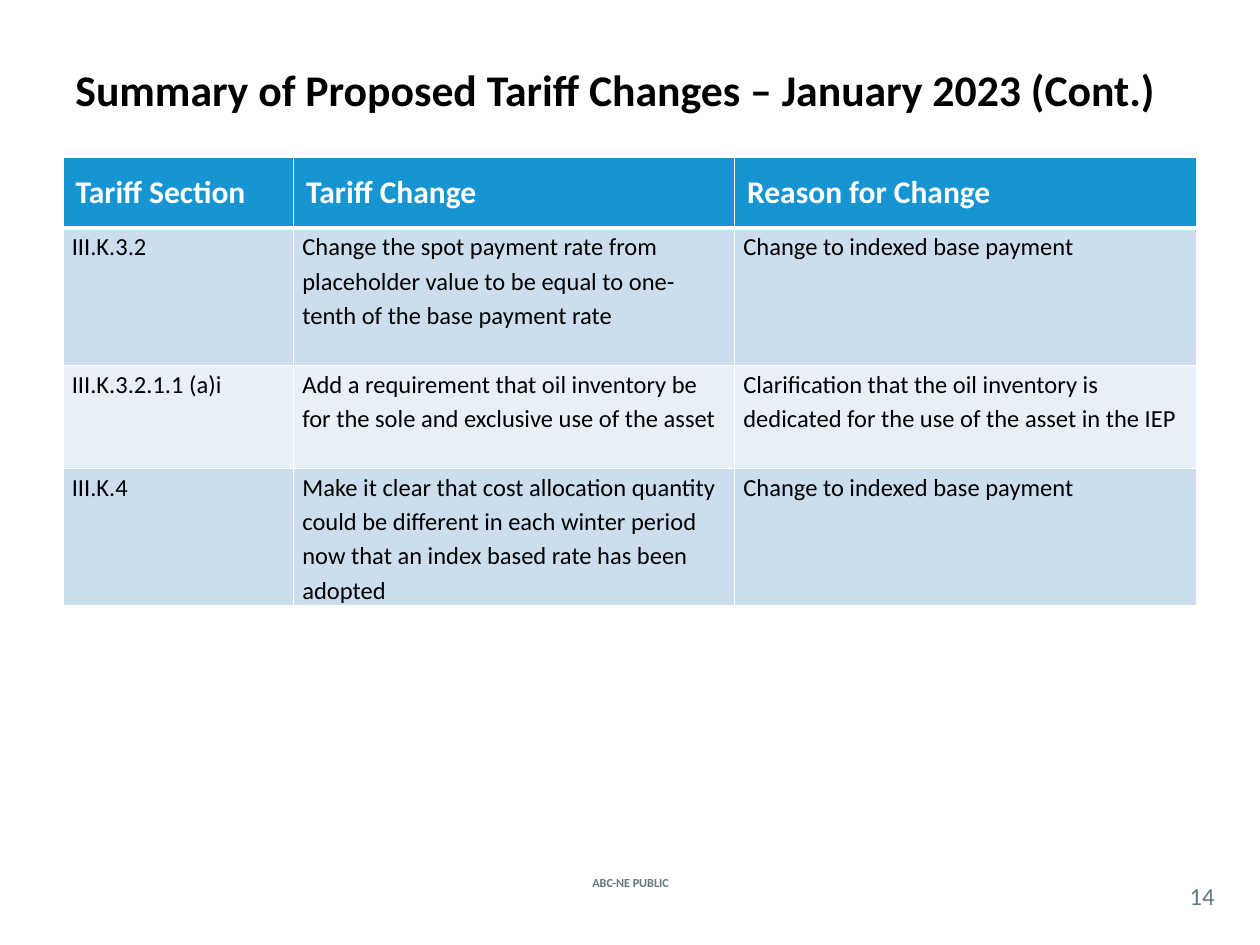
import pptx
import pptx.dml.color
import pptx.enum.text
import pptx.oxml.ns
import pptx.util
from lxml import etree
from pptx.dml.color import RGBColor
from pptx.util import Inches

BLACK = RGBColor(0x00, 0x00, 0x00)
WHITE = RGBColor(0xFF, 0xFF, 0xFF)
SLATE = RGBColor(0x62, 0x77, 0x7F)
HEADER_BLUE = RGBColor(0x17, 0x95, 0xD2)
ROW_FILLS = (RGBColor(0xCC, 0xDD, 0xEE), RGBColor(0xE8, 0xEF, 0xF7))

LEFT = pptx.enum.text.PP_ALIGN.LEFT
CENTER = pptx.enum.text.PP_ALIGN.CENTER
TOP = pptx.enum.text.MSO_ANCHOR.TOP
MIDDLE = pptx.enum.text.MSO_ANCHOR.MIDDLE

COLUMN_WIDTHS = (1.83, 3.5, 3.67)
ROW_HEIGHTS = (0.56, 1.09, 0.82, 1.09)
TARIFF_CHANGES = (
    ("Tariff Section", "Tariff Change", "Reason for Change"),
    (
        "III.K.3.2",
        "Change the spot payment rate from placeholder value to be equal to "
        "one-tenth of the base payment rate",
        "Change to indexed base payment",
    ),
    (
        "III.K.3.2.1.1 (a)i",
        "Add a requirement that oil inventory be for the sole and exclusive "
        "use of the asset",
        "Clarification that the oil inventory is dedicated for the use of the "
        "asset in the IEP",
    ),
    (
        "III.K.4",
        "Make it clear that cost allocation quantity could be different in "
        "each winter period now that an index based rate has been adopted",
        "Change to indexed base payment",
    ),
)


class SlideBuilder:
    font_name = "Calibri"

    def __init__(self, slide):
        self.slide = slide

    def format_text(self, text_frame, size, color, bold):
        for paragraph in text_frame.paragraphs:
            for run in paragraph.runs:
                run.font.name = self.font_name
                run.font.size = pptx.util.Pt(size)
                run.font.color.rgb = color
                run.font.bold = bold

    def add_text(self, text, left, top, width, height, size, color,
                 bold=False, align=LEFT, padded=True):
        box = self.slide.shapes.add_textbox(
            Inches(left), Inches(top), Inches(width), Inches(height))
        frame = box.text_frame
        frame.word_wrap = True
        frame.vertical_anchor = MIDDLE
        if not padded:
            frame.margin_left = frame.margin_right = 0
            frame.margin_top = frame.margin_bottom = 0
        frame.text = text
        frame.paragraphs[0].alignment = align
        self.format_text(frame, size, color, bold)

    def add_borders(self, cell, top_width, bottom_width):
        """Draw white lines on all four sides; widths are in points."""
        properties = cell._tc.get_or_add_tcPr()
        sides = {"lnL": 1, "lnR": 1, "lnT": top_width, "lnB": bottom_width}
        for side, width in sides.items():
            line = etree.SubElement(
                properties, pptx.oxml.ns.qn(f"a:{side}"),
                w=str(pptx.util.Pt(width)))
            fill = etree.SubElement(line, pptx.oxml.ns.qn("a:solidFill"))
            etree.SubElement(
                fill, pptx.oxml.ns.qn("a:srgbClr"), val=str(WHITE))

    def fill_cell(self, cell, text, row):
        is_header = row == 0
        self.add_borders(cell, 3 if row == 1 else 1, 3 if is_header else 1)
        cell.fill.solid()
        cell.fill.fore_color.rgb = (
            HEADER_BLUE if is_header else ROW_FILLS[(row - 1) % 2])
        cell.vertical_anchor = MIDDLE if is_header else TOP
        cell.margin_left = cell.margin_right = Inches(0.1 if is_header else 0.07)
        cell.margin_top = cell.margin_bottom = Inches(0.05 if is_header else 0)
        cell.text_frame.text = text
        if is_header:
            self.format_text(cell.text_frame, 18, WHITE, True)
        else:
            cell.text_frame.paragraphs[0].line_spacing = 1.15
            self.format_text(cell.text_frame, 14, BLACK, False)

    def add_table(self, rows, left, top, column_widths, row_heights):
        table = self.slide.shapes.add_table(
            len(rows), len(column_widths), Inches(left), Inches(top),
            Inches(sum(column_widths)), Inches(sum(row_heights))).table
        for column, width in zip(table.columns, column_widths):
            column.width = Inches(width)
        for row, height in zip(table.rows, row_heights):
            row.height = Inches(height)
        for row, texts in enumerate(rows):
            for column, text in enumerate(texts):
                self.fill_cell(table.cell(row, column), text, row)


def main():
    presentation = pptx.Presentation()
    presentation.slide_width = Inches(10)
    presentation.slide_height = Inches(7.5)
    builder = SlideBuilder(
        presentation.slides.add_slide(presentation.slide_layouts[6]))

    builder.add_text("ABC-NE PUBLIC", 4.27, 6.92, 1.47, 0.17, 7, SLATE,
                     bold=True, align=CENTER)
    builder.add_text("14", 9.33, 6.96, 0.42, 0.29, 14, SLATE,
                     align=CENTER, padded=False)
    builder.add_table(TARIFF_CHANGES, 0.5, 1.25, COLUMN_WIDTHS, ROW_HEIGHTS)
    builder.add_text(
        "Summary of Proposed Tariff Changes – January 2023 (Cont.)",
        0.5, 0.08, 9, 1.25, 25, BLACK, bold=True)
    presentation.save("out.pptx")


if __name__ == "__main__":
    main()
